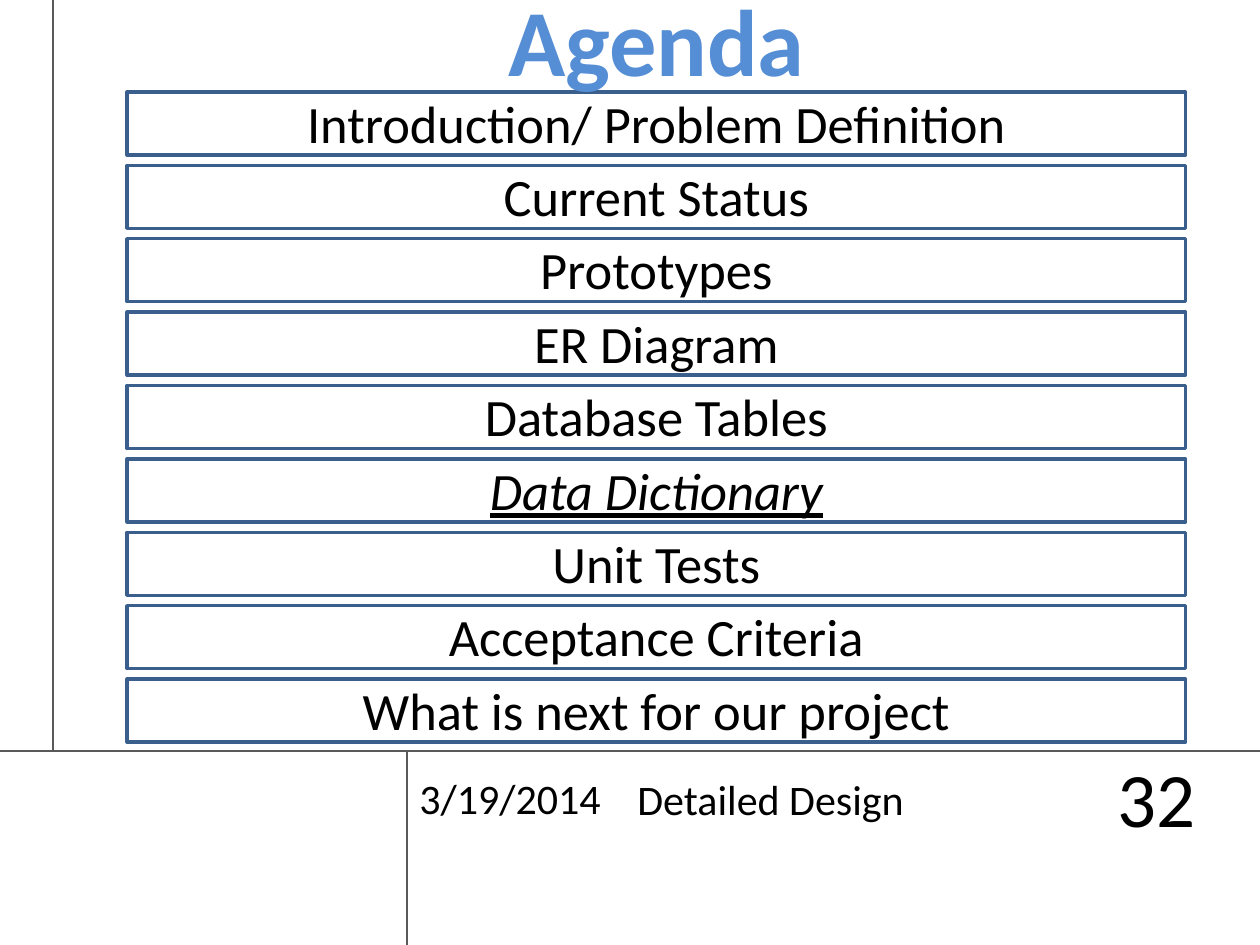
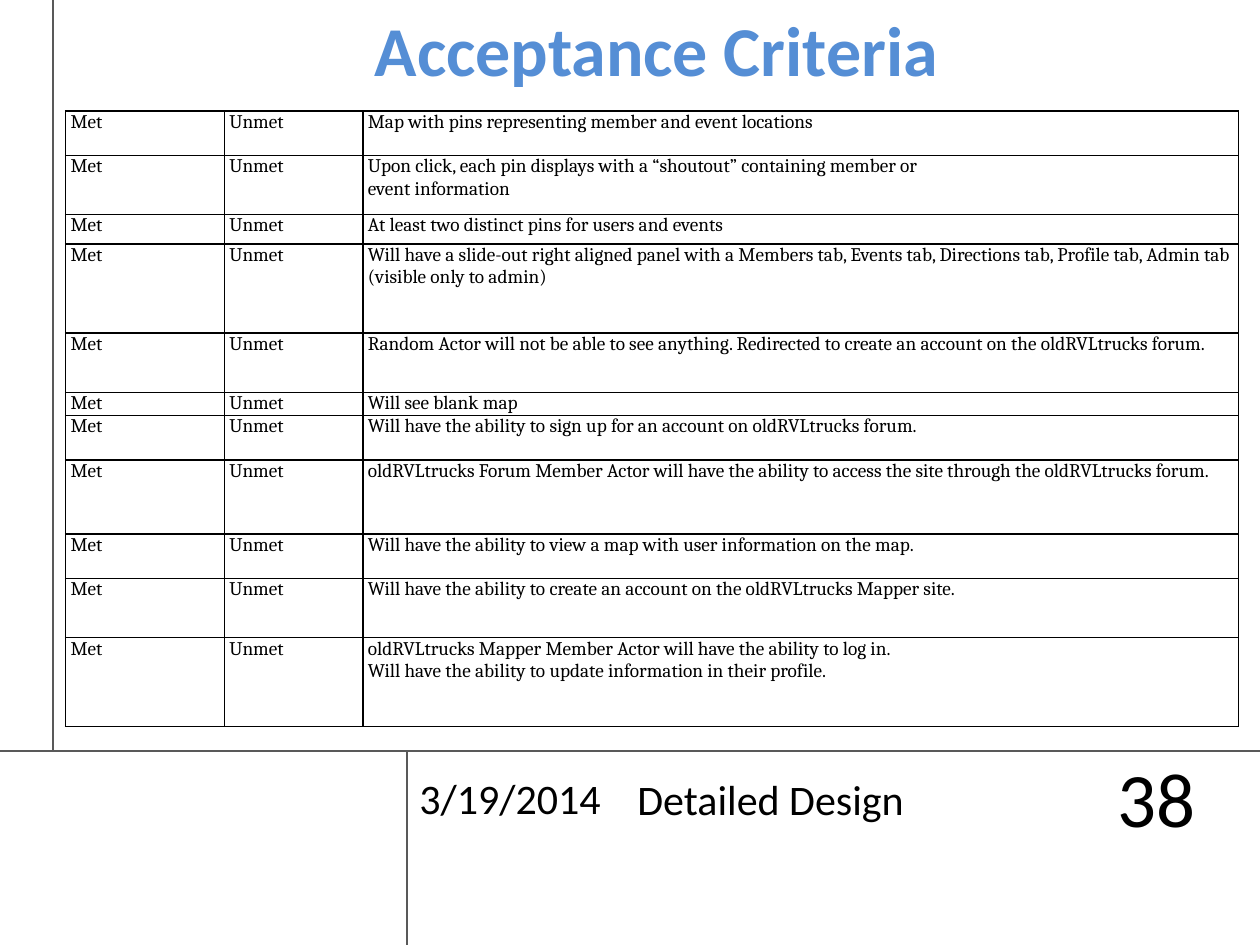
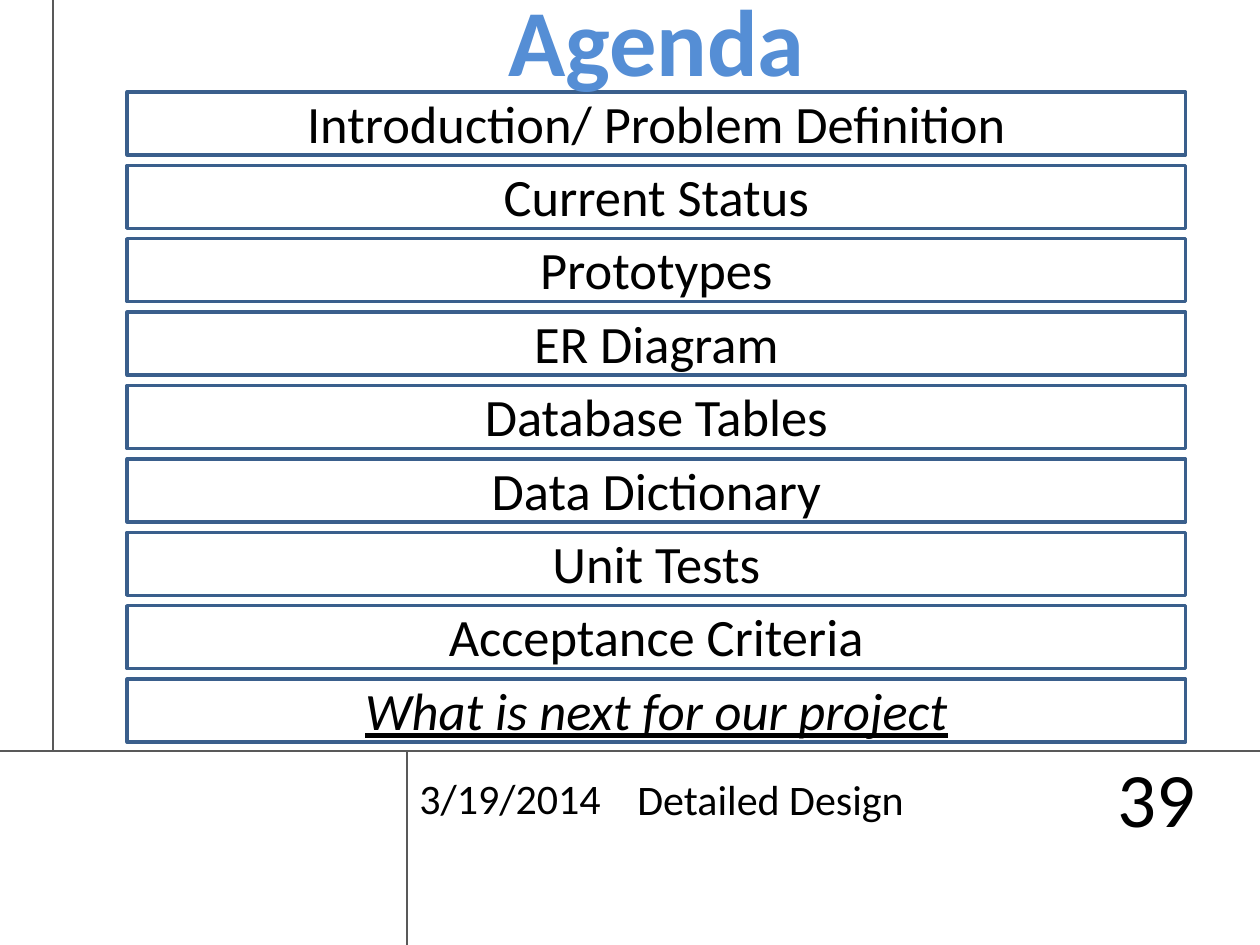
from itertools import product
from typing import NamedTuple

from lxml import etree
from pptx import Presentation
from pptx import util as u
from pptx.dml.color import RGBColor
from pptx.enum import shapes, text
from pptx.oxml import ns

# The slide is a grid of 100 columns by 75 rows of square cells.
COLUMNS, ROWS = 100, 75
CELL = u.Inches(0.1)

BLACK = RGBColor(0x00, 0x00, 0x00)
WHITE = RGBColor(0xFF, 0xFF, 0xFF)
RULE_GRAY = RGBColor(0x59, 0x59, 0x59)
BAR_BLUE = RGBColor(0x3A, 0x5F, 0x8C)
TITLE_BLUE = RGBColor(0x55, 0x8E, 0xD5)
TITLE_OUTLINE = RGBColor(0x05, 0x46, 0x97)

LEFT, CENTER, RIGHT = text.PP_ALIGN.LEFT, text.PP_ALIGN.CENTER, text.PP_ALIGN.RIGHT
TOP, MIDDLE = text.MSO_ANCHOR.TOP, text.MSO_ANCHOR.MIDDLE


class Box(NamedTuple):
    """A rectangle in grid cells."""
    left: float
    top: float
    width: float
    height: float

    def lengths(self) -> list[u.Length]:
        return [cells(value) for value in self]


class Style(NamedTuple):
    size: float
    color: RGBColor = BLACK
    align: text.PP_ALIGN = LEFT
    font: str = "Calibri"
    bold: bool = False
    emphasis: bool = False


class Rule(NamedTuple):
    """A straight line in grid cells."""
    x1: float
    y1: float
    x2: float
    y2: float


MARGIN, FOOTER_TOP, FOOTER_LEFT = 4.2, 59.6, 32.3
RULES = [
    Rule(COLUMNS, FOOTER_TOP, 0, FOOTER_TOP),
    Rule(MARGIN, FOOTER_TOP, MARGIN, 0),
    Rule(FOOTER_LEFT, ROWS, FOOTER_LEFT, FOOTER_TOP),
]
FOOTER = Style(24)
PAGE_NUMBER = Style(44, align=RIGHT)
AGENDA_LABEL = Style(30, align=CENTER)
CELL_TEXT = Style(11, font="Cambria")

AGENDA = [
    "Introduction/ Problem Definition", "Current Status", "Prototypes",
    "ER Diagram", "Database Tables", "Data Dictionary", "Unit Tests",
    "Acceptance Criteria", "What is next for our project",
]
FIRST_BAR = Box(10.1, 7.3, 84, 5)
LAST_BAR_TOP = 53.9
LABEL_RISE, LABEL_HEIGHT = 0.6, 6.1

TABLE_BOX = Box(5.2, 8.8, 93.1, 48.8)
COLUMN_WIDTHS = [12.6, 11, 69.5]


class Criterion(NamedTuple):
    """An acceptance criterion and the share of the table's height it takes."""
    share: float
    wording: str


CRITERIA = [
    Criterion(3, "Map with pins representing member and event locations"),
    Criterion(4, "Upon click, each pin displays with a “shoutout” containing member or\n"
                 "event information"),
    Criterion(2, "At least two distinct pins for users and events"),
    Criterion(6, "Will have a slide-out right aligned panel with a Members tab, Events tab, "
                 "Directions tab, Profile tab, Admin tab (visible only to admin)"),
    Criterion(4, "Random Actor will not be able to see anything. Redirected to create an "
                 "account on the oldRVLtrucks forum."),
    Criterion(1.5, "Will see blank map"),
    Criterion(3, "Will have the ability to sign up for an account on oldRVLtrucks forum."),
    Criterion(5, "oldRVLtrucks Forum Member Actor will have the ability to access the site "
                 "through the oldRVLtrucks forum."),
    Criterion(3, "Will have the ability to view a map with user information on the map."),
    Criterion(4, "Will have the ability to create an account on the oldRVLtrucks Mapper site."),
    Criterion(6, "oldRVLtrucks Mapper Member Actor will have the ability to log in.\n"
                 "Will have the ability to update information in their profile."),
]


def cells(count: float) -> u.Length:
    return u.Emu(round(count * CELL))


def add_outline(parent, tag: str, color: RGBColor, index: int) -> None:
    """Insert a 1 pt solid line element at the given place in parent."""
    line = etree.Element(ns.qn(tag), w=str(u.Pt(1)))
    fill = etree.SubElement(line, ns.qn("a:solidFill"))
    etree.SubElement(fill, ns.qn("a:srgbClr"), val=str(color))
    parent.insert(index, line)


def write(frame, wording: str, style: Style) -> None:
    frame.text = wording
    for paragraph in frame.paragraphs:
        paragraph.alignment = style.align
        font = paragraph.font
        font.name, font.size = style.font, u.Pt(style.size)
        font.color.rgb = style.color
        font.bold = style.bold
        font.italic = font.underline = style.emphasis


def add_text(slide, box: Box, wording: str, style: Style, anchor=TOP):
    frame = slide.shapes.add_textbox(*box.lengths()).text_frame
    frame.word_wrap = True
    frame.vertical_anchor = anchor
    write(frame, wording, style)
    return frame


def add_rule(slide, rule: Rule) -> None:
    connector = slide.shapes.add_connector(
        shapes.MSO_CONNECTOR.STRAIGHT, *map(cells, rule))
    connector.line.color.rgb = RULE_GRAY
    connector.line.width = u.Pt(0.75)
    etree.SubElement(connector._element.spPr, ns.qn("a:effectLst"))


def add_framed_slide(presentation, number: int):
    """Add a blank slide with the rules and the footer."""
    slide = presentation.slides.add_slide(presentation.slide_layouts[6])
    for rule in RULES:
        add_rule(slide, rule)
    add_text(slide, Box(FOOTER_LEFT, FOOTER_TOP, 18.9, 7.4), "3/19/2014", FOOTER, MIDDLE)
    add_text(slide, Box(49.6, 60.9, 45.1, 5), "Detailed Design", FOOTER)
    add_text(slide, Box(83.8, 59.5, 12.1, 7.4), str(number), PAGE_NUMBER, MIDDLE)
    return slide


def add_title(slide, wording: str, top: float, height: float, size: float) -> None:
    style = Style(size, TITLE_BLUE, CENTER, bold=True)
    frame = add_text(slide, Box(MARGIN, top, COLUMNS - MARGIN, height), wording, style)
    run = frame.paragraphs[0].runs[0]
    add_outline(run._r.get_or_add_rPr(), "a:ln", TITLE_OUTLINE, 0)


def add_bar(slide, box: Box) -> None:
    bar = slide.shapes.add_shape(shapes.MSO_SHAPE.RECTANGLE, *box.lengths())
    bar.shadow.inherit = False
    bar.fill.solid()
    bar.fill.fore_color.rgb = WHITE
    bar.line.color.rgb = BAR_BLUE
    bar.line.width = u.Pt(2)


def add_agenda_slide(presentation, number: int, current: str) -> None:
    slide = add_framed_slide(presentation, number)
    pitch = (LAST_BAR_TOP - FIRST_BAR.top) / (len(AGENDA) - 1)
    for index, topic in enumerate(AGENDA):
        bar = FIRST_BAR._replace(top=FIRST_BAR.top + index * pitch)
        add_bar(slide, bar)
        label = bar._replace(top=bar.top - LABEL_RISE, height=LABEL_HEIGHT)
        add_text(slide, label, topic, AGENDA_LABEL._replace(emphasis=topic == current))
    add_title(slide, "Agenda", top=-1.9, height=10.1, size=54)


def style_cell(cell, wording: str) -> None:
    cell.margin_left = cell.margin_right = cells(0.4)
    cell.margin_top = cell.margin_bottom = 0
    write(cell.text_frame, wording, CELL_TEXT)
    properties = cell._tc.get_or_add_tcPr()
    for index, side in enumerate("LRTB"):
        add_outline(properties, f"a:ln{side}", BLACK, index)
    cell.fill.background()


def add_criteria_slide(presentation, number: int) -> None:
    slide = add_framed_slide(presentation, number)
    add_title(slide, "Acceptance Criteria", top=0, height=7.7, size=40)
    table = slide.shapes.add_table(
        len(CRITERIA), len(COLUMN_WIDTHS), *TABLE_BOX.lengths()).table
    table.first_row = table.horz_banding = False
    for column, width in zip(table.columns, COLUMN_WIDTHS):
        column.width = cells(width)
    row_unit = TABLE_BOX.height / sum(criterion.share for criterion in CRITERIA)
    for row, criterion in zip(table.rows, CRITERIA):
        row.height = cells(criterion.share * row_unit)
    for row, column in product(range(len(CRITERIA)), range(len(COLUMN_WIDTHS))):
        wording = ("Met", "Unmet", CRITERIA[row].wording)[column]
        style_cell(table.cell(row, column), wording)


def main() -> None:
    presentation = Presentation()
    presentation.slide_width, presentation.slide_height = cells(COLUMNS), cells(ROWS)
    add_agenda_slide(presentation, 32, current="Data Dictionary")
    add_criteria_slide(presentation, 38)
    add_agenda_slide(presentation, 39, current="What is next for our project")
    presentation.save("out.pptx")


if __name__ == "__main__":
    main()
